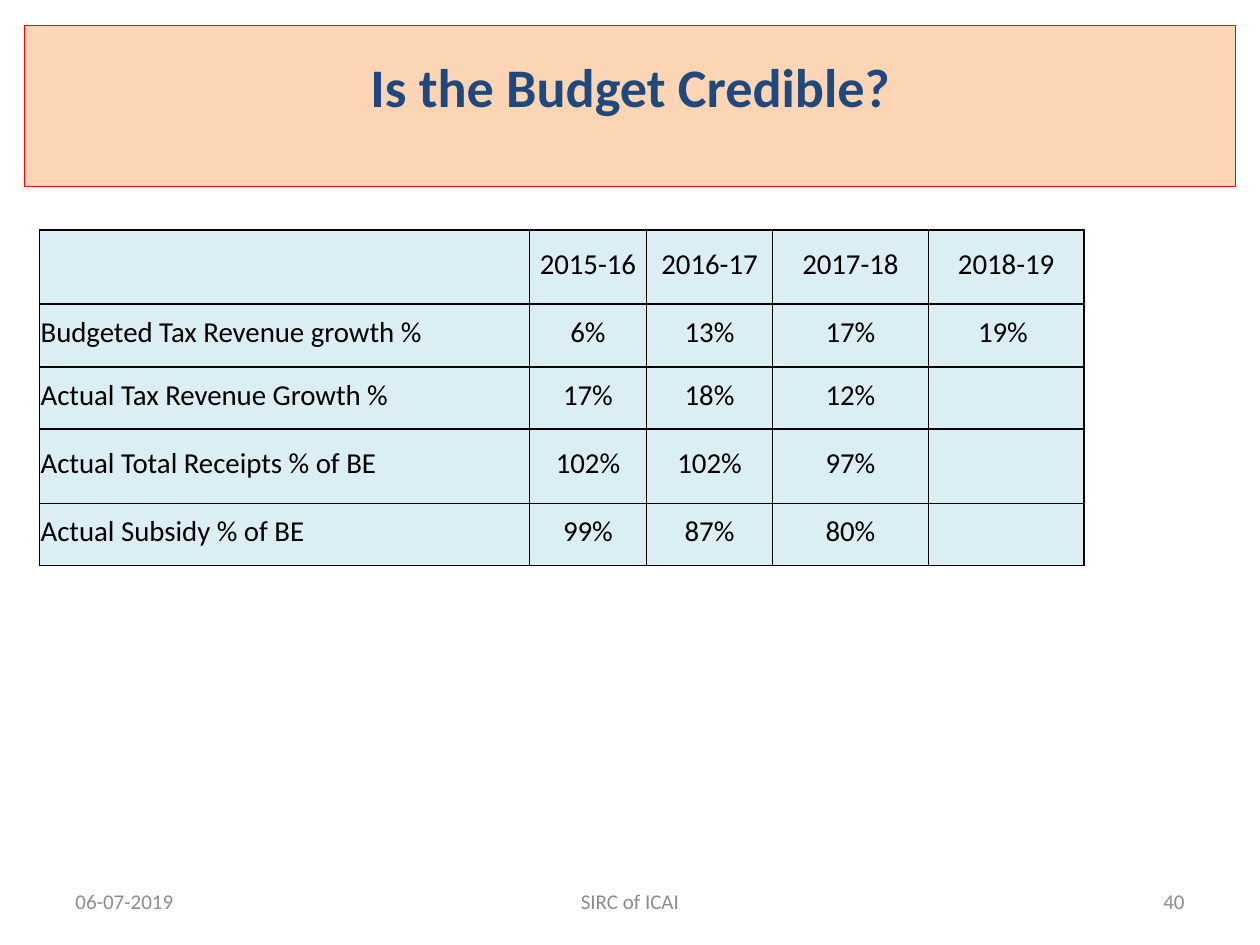
from lxml import etree
from pptx import Presentation
from pptx.dml.color import RGBColor
from pptx.enum import shapes, text
from pptx.oxml.ns import qn
from pptx.util import Pt

PEACH = RGBColor(0xFC, 0xD5, 0xB5)
RED = RGBColor(0xFF, 0x00, 0x00)
NAVY = RGBColor(0x1F, 0x49, 0x7D)
ICE = RGBColor(0xDB, 0xEE, 0xF4)
BLACK = RGBColor(0x00, 0x00, 0x00)
GREY = RGBColor(0x8C, 0x8C, 0x8C)

LEFT, CENTER, RIGHT = text.PP_ALIGN.LEFT, text.PP_ALIGN.CENTER, text.PP_ALIGN.RIGHT
MIDDLE = text.MSO_ANCHOR.MIDDLE

COLUMN_WIDTHS = [280, 67, 72, 89, 89]
ROW_HEIGHTS = [42.3, 36, 35.5, 42.5, 35.5]
BUDGET_ROWS = [
    ["", "2015-16", "2016-17", "2017-18", "2018-19"],
    ["Budgeted Tax Revenue growth %", "6%", "13%", "17%", "19% "],
    ["Actual Tax Revenue Growth %", "17%", "18%", "12%", ""],
    ["Actual Total Receipts % of BE", "102%", "102%", "97%", ""],
    ["Actual Subsidy % of BE", "99%", "87%", "80%", ""],
]


def write(frame, wording, size, color, align, bold=False):
    """Write one run into the first paragraph of a text frame."""
    paragraph = frame.paragraphs[0]
    paragraph.alignment = align
    run = paragraph.add_run()
    run.text = wording
    run.font.name = "Calibri"
    run.font.size = Pt(size)
    run.font.bold = bold
    run.font.color.rgb = color


def add_title(slide, left, top, width, height):
    """Place the title banner, its wording raised by a deeper bottom inset."""
    banner = slide.shapes.add_shape(
        shapes.MSO_SHAPE.RECTANGLE, Pt(left), Pt(top), Pt(width), Pt(height))
    banner.shadow.inherit = False
    banner.fill.solid()
    banner.fill.fore_color.rgb = PEACH
    banner.line.color.rgb = RED
    banner.line.width = Pt(0.75)
    frame = banner.text_frame
    frame.word_wrap = True
    frame.vertical_anchor = MIDDLE
    frame.margin_bottom = Pt(27)
    write(frame, "Is the Budget Credible?", 31, NAVY, CENTER, bold=True)


def add_borders(cell):
    """Draw a thin black line on all four sides of a cell."""
    properties = cell._tc.get_or_add_tcPr()
    for index, side in enumerate(("a:lnL", "a:lnR", "a:lnT", "a:lnB")):
        border = etree.Element(qn(side), w=str(Pt(1)))
        fill = etree.SubElement(border, qn("a:solidFill"))
        etree.SubElement(fill, qn("a:srgbClr"), val=str(BLACK))
        properties.insert(index, border)


def add_budget_table(slide, left, top):
    """Place the table of budgeted and actual figures by year."""
    table = slide.shapes.add_table(
        len(ROW_HEIGHTS), len(COLUMN_WIDTHS), Pt(left), Pt(top),
        Pt(sum(COLUMN_WIDTHS)), Pt(sum(ROW_HEIGHTS))).table
    for column, width in zip(table.columns, COLUMN_WIDTHS):
        column.width = Pt(width)
    for row, height, entries in zip(table.rows, ROW_HEIGHTS, BUDGET_ROWS):
        row.height = Pt(height)
        for index, (cell, entry) in enumerate(zip(row.cells, entries)):
            cell.fill.solid()
            cell.fill.fore_color.rgb = ICE
            cell.margin_left = cell.margin_right = cell.margin_top = Pt(0.75)
            cell.margin_bottom = Pt(3.6)
            cell.vertical_anchor = MIDDLE
            add_borders(cell)
            if entry:
                write(cell.text_frame, entry, 16.5, BLACK, CENTER if index else LEFT)


def add_footer(slide, left, top, width, height):
    """Place date, body and page number across the footer band."""
    side, middle = 168, 228
    parts = [
        ("06-07-2019", left, side, LEFT),
        ("SIRC of ICAI", left + (width - middle) / 2, middle, CENTER),
        ("40", left + width - side, side, RIGHT),
    ]
    for wording, start, extent, align in parts:
        box = slide.shapes.add_textbox(Pt(start), Pt(top), Pt(extent), Pt(height))
        box.text_frame.word_wrap = True
        box.text_frame.vertical_anchor = MIDDLE
        write(box.text_frame, wording, 12, GREY, align)


def main():
    """Build the slide and save it."""
    deck = Presentation()
    deck.slide_width, deck.slide_height = Pt(720), Pt(540)
    slide = deck.slides.add_slide(deck.slide_layouts[6])
    add_title(slide, 14, 14.75, 692, 91.75)
    add_budget_table(slide, 22.5, 131.5)
    add_footer(slide, 36, 500.5, 648, 28.75)
    deck.save("out.pptx")


if __name__ == "__main__":
    main()
